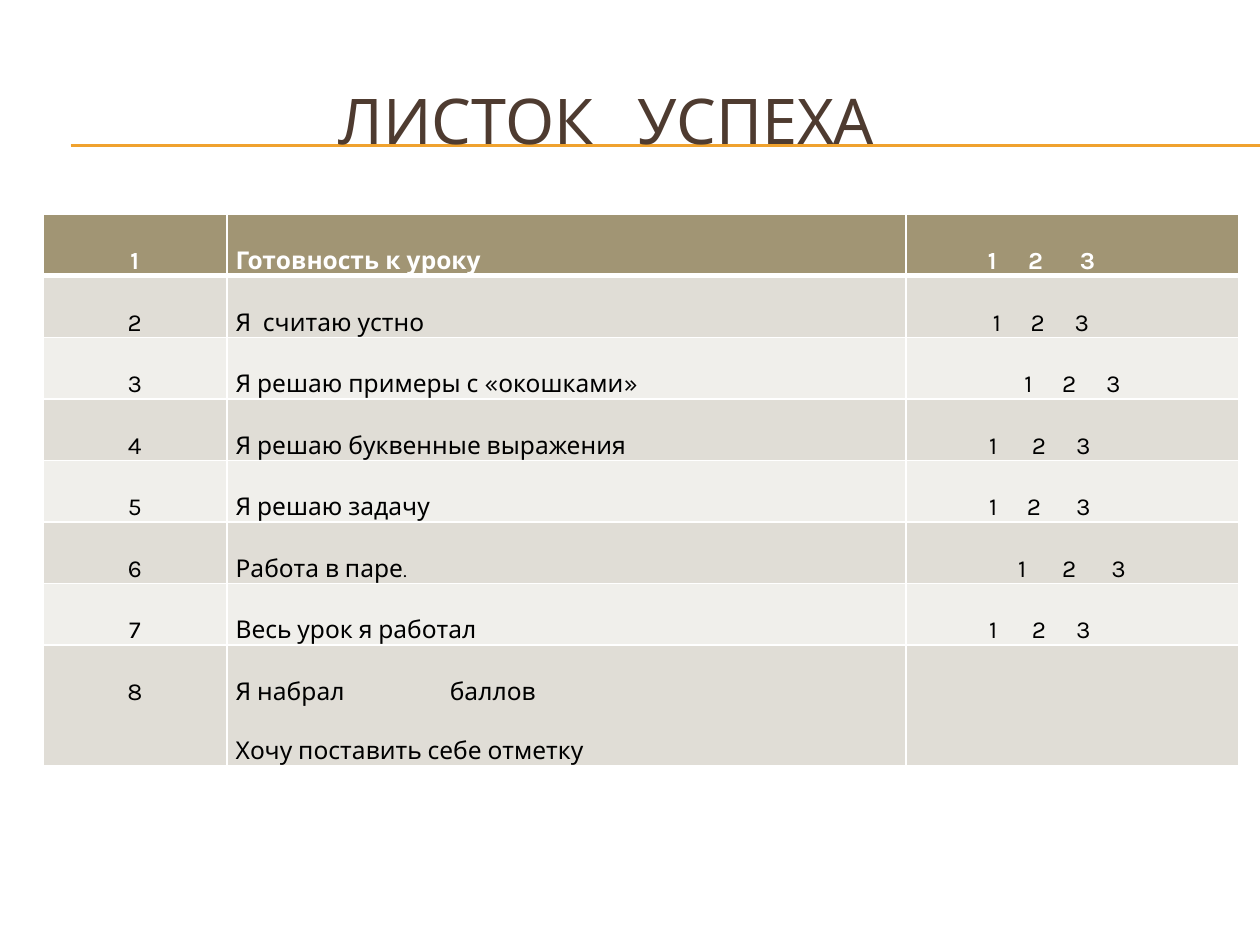
import pptx
import pptx.dml.color
import pptx.enum.shapes
import pptx.enum.text
import pptx.oxml
import pptx.oxml.ns
import pptx.util
from pptx.util import Inches

RGBColor = pptx.dml.color.RGBColor
ALIGN = pptx.enum.text.PP_ALIGN

WHITE = RGBColor(0xFF, 0xFF, 0xFF)
BLACK = RGBColor(0x00, 0x00, 0x00)
ORANGE = RGBColor(0xF0, 0xA2, 0x2E)
BROWN = RGBColor(0x4E, 0x3B, 0x30)
OLIVE = RGBColor(0xA1, 0x95, 0x74)
DARK_BAND = RGBColor(0xE0, 0xDD, 0xD6)
LIGHT_BAND = RGBColor(0xF0, 0xEF, 0xEB)

FONT = "Karla"
COLUMN_WIDTHS = (1.46, 5.39, 2.64)
ROW_HEIGHT = 0.48
LAST_ROW_HEIGHT = 0.94

SUCCESS_ITEMS = [
    ("Готовность к уроку", (0.65, 0.32, 0.73)),
    ("Я  считаю устно", (0.69, 0.3, 0.65)),
    ("Я решаю примеры с «окошками»", (0.94, 0.3, 0.65)),
    ("Я решаю буквенные выражения", (0.66, 0.34, 0.69)),
    ("Я решаю задачу", (0.66, 0.3, 0.69)),
    ("Работа в паре", (0.89, 0.35, 0.74)),
    ("Весь урок я работал", (0.66, 0.34, 0.69)),
    ("Я набрал \tбаллов", None),
]


def add_run(paragraph, text, size, color, bold=False):
    run = paragraph.add_run()
    run.text = text
    run.font.name = FONT
    run.font.size = pptx.util.Pt(size)
    run.font.bold = bold
    run.font.color.rgb = color


def add_tab_stops(paragraph, positions):
    properties = paragraph._p.get_or_add_pPr()
    tab_list = pptx.oxml.parse_xml(f"<a:tabLst {pptx.oxml.ns.nsdecls('a')}/>")
    for position in positions:
        tab_list.append(pptx.oxml.parse_xml(
            f'<a:tab {pptx.oxml.ns.nsdecls("a")} pos="{Inches(position)}" algn="l"/>'))
    properties.append(tab_list)


def add_rule(slide, top):
    connector = slide.shapes.add_connector(
        pptx.enum.shapes.MSO_CONNECTOR.STRAIGHT,
        Inches(0.56), Inches(top), Inches(10), Inches(top))
    connector.line.color.rgb = ORANGE
    connector.line.width = pptx.util.Pt(0.75)
    connector.element.spPr.append(
        pptx.oxml.parse_xml(f"<a:effectLst {pptx.oxml.ns.nsdecls('a')}/>"))


def format_title(slide):
    title = slide.shapes.title
    title.left, title.top = Inches(0.33), Inches(0.49)
    title.width, title.height = Inches(9.5), Inches(0.92)
    frame = title.text_frame
    frame.auto_size = pptx.enum.text.MSO_AUTO_SIZE.NONE
    frame.vertical_anchor = pptx.enum.text.MSO_ANCHOR.MIDDLE
    frame.margin_left = Inches(2.36)
    paragraph = frame.paragraphs[0]
    paragraph.alignment = ALIGN.LEFT
    add_tab_stops(paragraph, [2.37])
    add_run(paragraph, "ЛИСТОК\tУСПЕХА", 36, BROWN)
    slide.shapes.element.append(title.element)


def style_cell(cell, row_index):
    widths = {"L": 1, "R": 1, "T": 3 if row_index == 1 else 1,
              "B": 3 if row_index == 0 else 1}
    properties = cell._tc.get_or_add_tcPr()
    for side, width in widths.items():
        properties.append(pptx.oxml.parse_xml(
            f'<a:ln{side} {pptx.oxml.ns.nsdecls("a")} w="{pptx.util.Pt(width)}">'
            f'<a:solidFill><a:srgbClr val="{WHITE}"/></a:solidFill></a:ln{side}>'))
    cell.fill.solid()
    if row_index == 0:
        cell.fill.fore_color.rgb = OLIVE
    else:
        cell.fill.fore_color.rgb = DARK_BAND if row_index % 2 else LIGHT_BAND
    cell.margin_left = cell.margin_right = Inches(0.07)
    cell.margin_top = pptx.util.Pt(16.4)
    cell.margin_bottom = 0


def write_paragraph(paragraph, text, alignment, is_header):
    paragraph.alignment = alignment
    paragraph.line_spacing = 1.15
    add_run(paragraph, text, 14, WHITE if is_header else BLACK, is_header)


def fill_row(table, row_index, item, score_layout):
    is_header = row_index == 0
    number_cell, item_cell, score_cell = table.rows[row_index].cells
    for cell in (number_cell, item_cell, score_cell):
        style_cell(cell, row_index)

    write_paragraph(number_cell.text_frame.paragraphs[0], str(row_index + 1),
                    ALIGN.CENTER, is_header)
    item_paragraph = item_cell.text_frame.paragraphs[0]
    write_paragraph(item_paragraph, item,
                    ALIGN.JUSTIFY if is_header else ALIGN.LEFT, is_header)
    if "\t" in item:
        add_tab_stops(item_paragraph, [1.7])
    if item == "Работа в паре":
        add_run(item_paragraph, ".", 11, BLACK)

    if score_layout:
        indent, *stops = score_layout
        score_cell.margin_left = Inches(indent)
        score_paragraph = score_cell.text_frame.paragraphs[0]
        write_paragraph(score_paragraph, "1\t2\t3", ALIGN.LEFT, is_header)
        add_tab_stops(score_paragraph, stops)


def add_success_table(slide):
    row_count = len(SUCCESS_ITEMS)
    height = ROW_HEIGHT * (row_count - 1) + LAST_ROW_HEIGHT
    table = slide.shapes.add_table(
        row_count, len(COLUMN_WIDTHS), Inches(0.34), Inches(1.7),
        Inches(sum(COLUMN_WIDTHS)), Inches(height)).table
    for column, width in zip(table.columns, COLUMN_WIDTHS):
        column.width = Inches(width)
    for row_index, (item, score_layout) in enumerate(SUCCESS_ITEMS):
        table.rows[row_index].height = Inches(ROW_HEIGHT)
        fill_row(table, row_index, item, score_layout)
    table.rows[row_count - 1].height = Inches(LAST_ROW_HEIGHT)
    grade_paragraph = table.cell(row_count - 1, 1).text_frame.add_paragraph()
    write_paragraph(grade_paragraph, "Хочу поставить себе отметку", ALIGN.LEFT, False)
    grade_paragraph.space_before = pptx.util.Pt(15)


def main():
    presentation = pptx.Presentation()
    presentation.slide_width = Inches(10)
    presentation.slide_height = Inches(7.5)
    slide = presentation.slides.add_slide(presentation.slide_layouts[5])
    slide.background.fill.solid()
    slide.background.fill.fore_color.rgb = WHITE
    for top in (1.15, 1.16):
        add_rule(slide, top)
    format_title(slide)
    add_success_table(slide)
    presentation.save("out.pptx")


if __name__ == "__main__":
    main()
